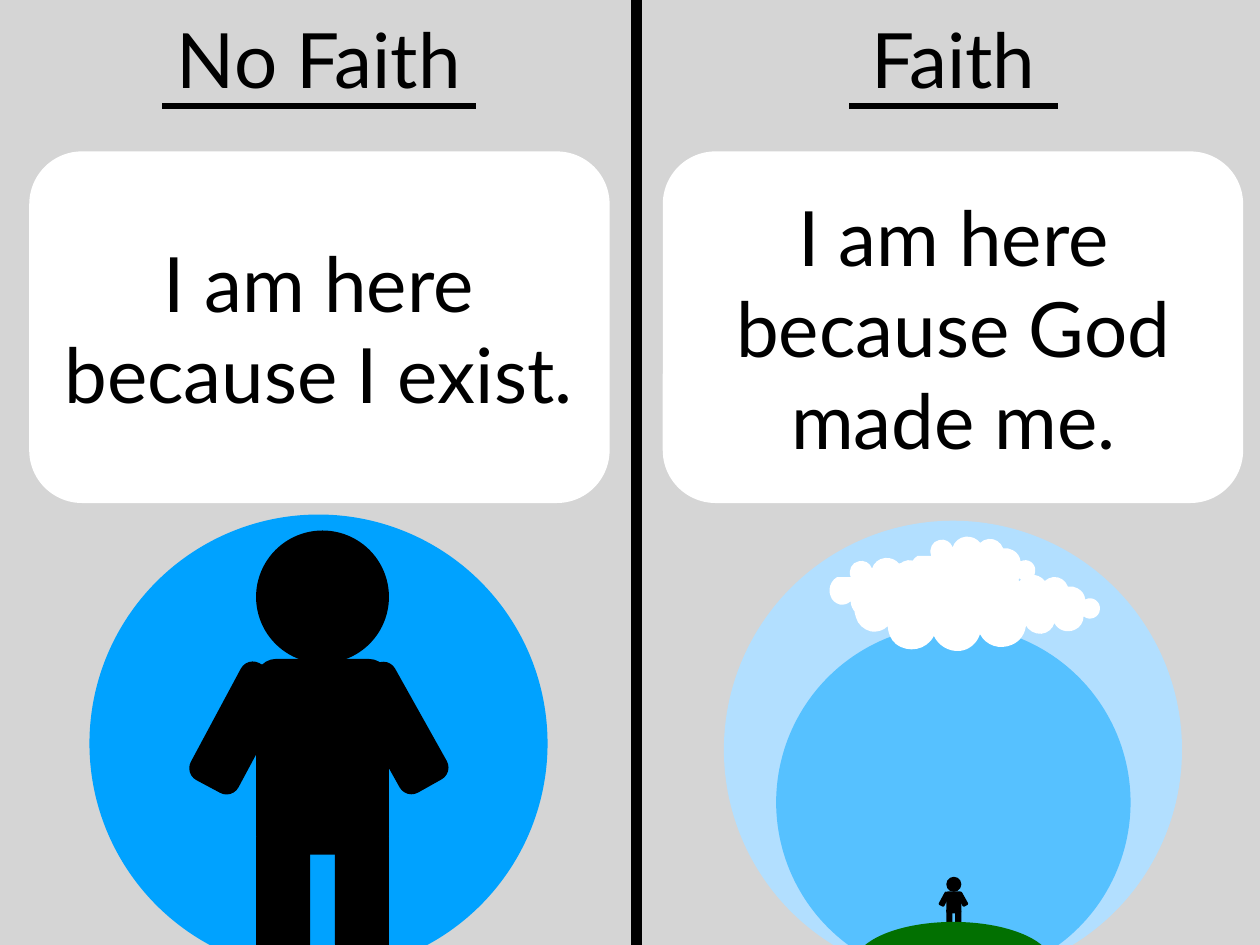
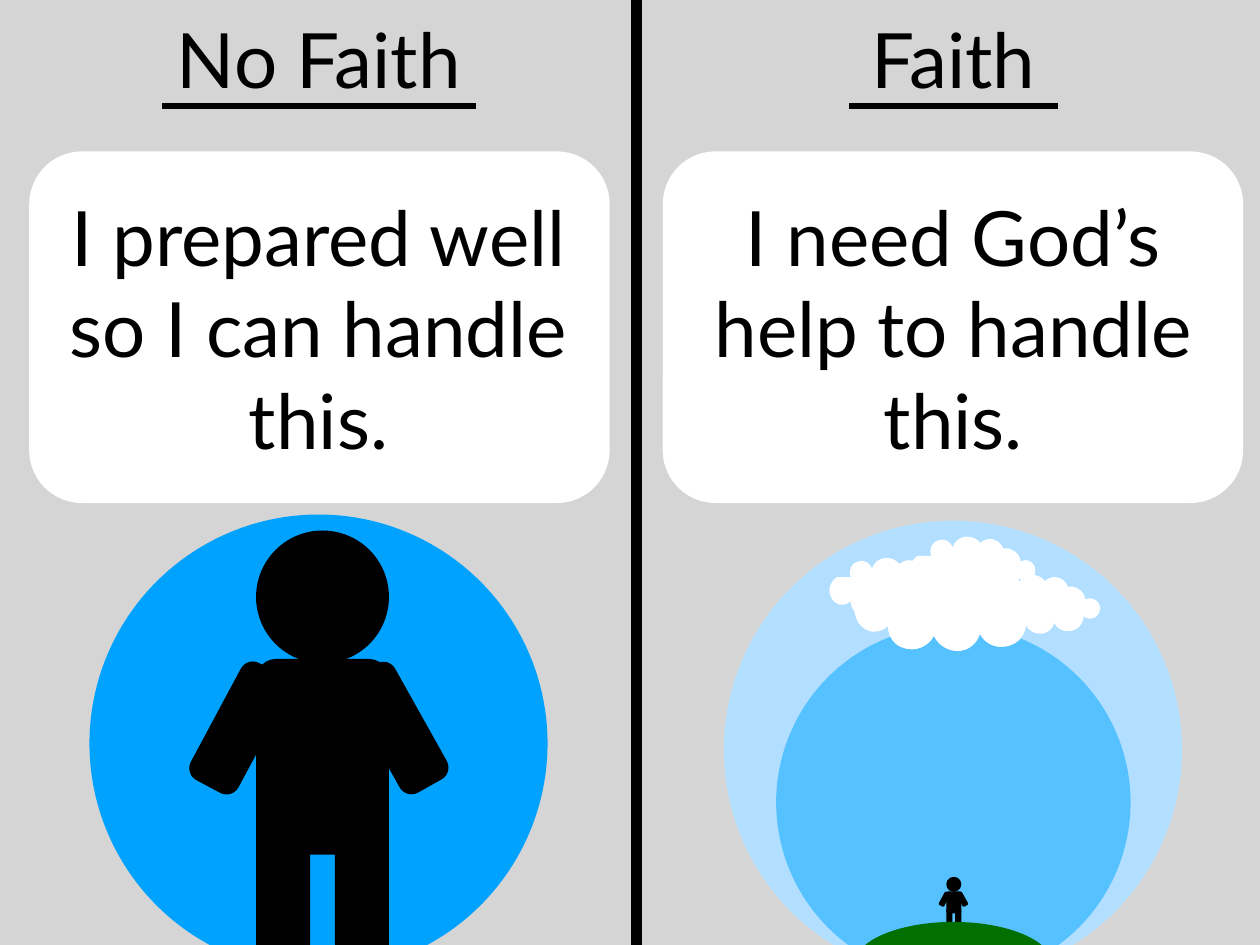
from lxml.etree import SubElement
from pptx import Presentation
from pptx.dml.color import RGBColor
from pptx.enum.shapes import MSO_CONNECTOR, MSO_SHAPE
from pptx.enum.text import MSO_ANCHOR, PP_ALIGN
from pptx.oxml.ns import qn
from pptx.util import Pt

EMU_PER_PX = 9144  # 100 px to the inch
SLIDE_W, SLIDE_H = 1422, 1067
FONT, FONT_SIZE = "Lato", 62
INSET = 6

COLORS = {
    "backdrop": "D5D5D5",
    "ink": "000000",
    "paper": "FFFFFF",
    "sky": "00A2FF",
    "outer_sky": "B2DFFF",
    "inner_sky": "56C1FF",
    "hill": "027001",
}

STATEMENTS = [
    ("I am here because I exist.", "I am here because God made me."),
    ("I prepared well so I can handle this.", "I need God’s help to handle this."),
]

# Parts of a person whose head is 150 px wide: left, top, width, height, rotation, rounding
HEAD_WIDTH = 150
TORSO_AND_LIMBS = [
    (0, 145, 150, 221, 0, 0.15),
    (0, 332, 61, 150, 0, 0.25),
    (89, 332, 61, 150, 0, 0.25),
    (-49, 148, 61, 150, 28.2, 0.25),
    (129, 148, 61, 150, 330.8, 0.25),
]

# Outline of a cloud 224 px wide: each step is an end point,
# led by two control points where the step is curved
CLOUD_WIDTH = 224
CLOUD_START = (2, 67)
CLOUD_STEPS = [
    [(4, 75), (11, 81), (19, 83)],
    [(26, 84), (33, 82), (38, 77)],
    [(38, 84), (41, 92), (47, 97)],
    [(61, 108), (82, 104), (90, 88)],
    [(95, 99), (107, 106), (119, 105)],
    [(130, 104), (139, 96), (142, 86)],
    [(149, 99), (164, 104), (178, 98)],
    [(188, 94), (194, 84), (194, 74)],
    [(205, 83), (222, 76), (223, 62)],
    [(225, 48), (210, 37), (197, 44)],
    [(196, 35), (191, 28), (183, 24)],
    [(178, 21), (172, 20), (166, 21)],
    [(162, 10), (152, 3), (140, 4)],
    [(134, 5), (129, 7), (125, 11)],
    [(119, 3), (109, -1), (99, 0)],
    [(88, 1), (79, 9), (76, 19)],
    [(73, 9), (62, 3), (52, 6)],
    [(40, 8), (33, 22), (38, 34)],
    [(14, 34)],
    [(10, 36), (6, 40), (4, 44)],
    [(0, 51), (-1, 60), (2, 67)],
]
CLOUD_PLACES = [(964, 630, 224), (936, 630, 142), (1100, 649, 142), (1027, 606, 142)]


def px(length):
    return round(length * EMU_PER_PX)


def rgb(color):
    return RGBColor.from_string(COLORS[color])


def paint(shape, color):
    shape.shadow.inherit = False
    shape.fill.solid()
    shape.fill.fore_color.rgb = rgb(color)
    shape.line.fill.background()


def add_block(shapes, kind, box, color, rounding=None, rotation=0):
    block = shapes.add_shape(kind, *map(px, box))
    paint(block, color)
    block.rotation = rotation
    if rounding is not None:
        block.adjustments[0] = rounding


def add_rule(shapes, start, end, weight):
    rule = shapes.add_connector(MSO_CONNECTOR.STRAIGHT, *map(px, start + end))
    rule.line.color.rgb = rgb("ink")
    rule.line.width = Pt(weight)
    SubElement(rule._element.spPr, qn("a:effectLst"))


def add_words(shapes, box, words):
    frame = shapes.add_textbox(*map(px, box)).text_frame
    frame.word_wrap = True
    frame.vertical_anchor = MSO_ANCHOR.MIDDLE
    frame.margin_left = frame.margin_right = px(INSET)
    frame.margin_top = frame.margin_bottom = px(INSET)
    paragraph = frame.paragraphs[0]
    paragraph.alignment = PP_ALIGN.CENTER
    run = paragraph.add_run()
    run.text = words
    run.font.name = FONT
    run.font.size = Pt(FONT_SIZE)
    run.font.color.rgb = rgb("ink")


def add_person(shapes, left, top, head):
    scale = head / HEAD_WIDTH
    add_block(shapes, MSO_SHAPE.OVAL, (left, top, head, head), "ink")
    for x, y, width, height, rotation, rounding in TORSO_AND_LIMBS:
        box = (left + x * scale, top + y * scale, width * scale, height * scale)
        add_block(shapes, MSO_SHAPE.ROUNDED_RECTANGLE, box, "ink", rounding, rotation)


def bend(shape, steps):
    """Turn the straight segments of a freeform into curves where a step has control points."""
    segments = list(shape._element.iter(qn("a:lnTo")))
    for segment, step in zip(segments, steps):
        if len(step) == 1:
            continue
        segment.tag = qn("a:cubicBezTo")
        for place, (x, y) in enumerate(step[:-1]):
            control = SubElement(segment, qn("a:pt"))
            control.set("x", str(x - shape.left))
            control.set("y", str(y - shape.top))
            segment.insert(place, control)


def add_cloud(shapes, left, top, width):
    scale = width / CLOUD_WIDTH

    def locate(point):
        return px(left + point[0] * scale), px(top + point[1] * scale)

    steps = [[locate(point) for point in step] for step in CLOUD_STEPS]
    builder = shapes.build_freeform(*locate(CLOUD_START))
    builder.add_line_segments([step[-1] for step in steps], close=True)
    cloud = builder.convert_to_shape()
    bend(cloud, steps)
    paint(cloud, "paper")


def add_world(shapes):
    """Draw a tiny person on a hill under wide sky and clouds."""
    add_block(shapes, MSO_SHAPE.OVAL, (817, 588, 517, 517), "outer_sky")
    add_block(shapes, MSO_SHAPE.OVAL, (876, 706, 400, 400), "inner_sky")
    add_person(shapes, 1068, 990, 17)
    add_block(shapes, MSO_SHAPE.OVAL, (964, 1041, 224, 96), "hill")
    for place in CLOUD_PLACES:
        add_cloud(shapes, *place)


def add_statement(shapes, card_left, words_left, words_width, statement):
    add_block(shapes, MSO_SHAPE.ROUNDED_RECTANGLE, (card_left, 171, 655, 397), "paper", 0.15)
    add_words(shapes, (words_left, 189, words_width, 361), statement)


def add_heading(shapes, left, heading, underline_width):
    width = 634
    add_words(shapes, (left, 1, width, 128), heading)
    start = left + (width - underline_width) // 2
    add_rule(shapes, (start + underline_width, 120), (start, 120), 5)


def add_comparison(slide, without_faith, with_faith):
    def group():
        return slide.shapes.add_group_shape().shapes

    add_block(slide.shapes, MSO_SHAPE.RECTANGLE, (0, -3, SLIDE_W, SLIDE_H + 5), "backdrop")
    add_block(slide.shapes, MSO_SHAPE.OVAL, (101, 581, 517, 517), "sky")
    add_person(group(), 289, 599, HEAD_WIDTH)
    add_world(group())
    add_rule(slide.shapes, (718, SLIDE_H + 11), (718, -12), 9)
    add_statement(group(), 33, 57, 605, without_faith)
    add_statement(group(), 748, 759, 634, with_faith)
    add_heading(group(), 43, "No Faith", 354)
    add_heading(group(), 759, "Faith", 236)


def main():
    deck = Presentation()
    deck.slide_width, deck.slide_height = px(SLIDE_W), px(SLIDE_H)
    blank = deck.slide_layouts[6]
    for without_faith, with_faith in STATEMENTS:
        add_comparison(deck.slides.add_slide(blank), without_faith, with_faith)
    deck.save("out.pptx")


if __name__ == "__main__":
    main()
